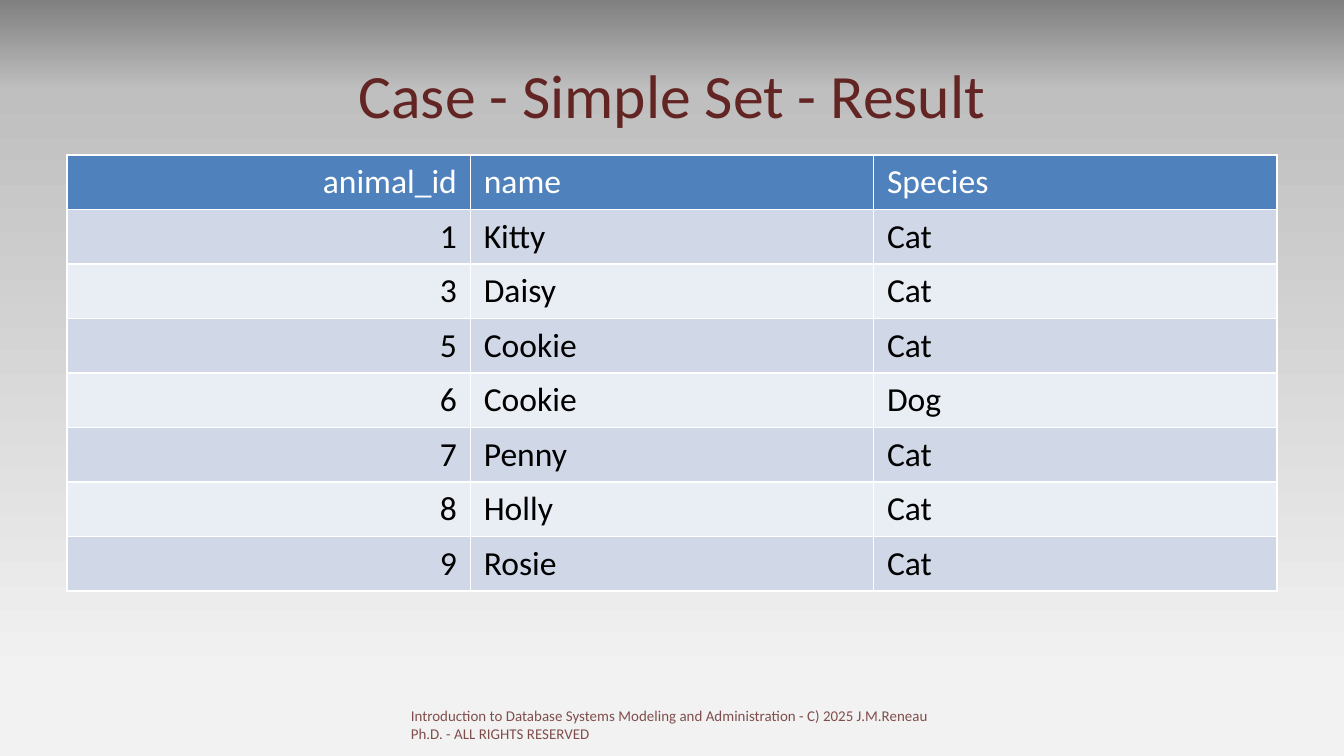
from copy import deepcopy

from lxml import etree
from pptx import Presentation
from pptx.dml.color import RGBColor
from pptx.enum.text import MSO_ANCHOR, PP_ALIGN
from pptx.oxml.ns import qn
from pptx.util import Pt

LEFT, CENTER, RIGHT = PP_ALIGN.LEFT, PP_ALIGN.CENTER, PP_ALIGN.RIGHT
TOP, MIDDLE = MSO_ANCHOR.TOP, MSO_ANCHOR.MIDDLE

COLORS = {
    "maroon": "632523",
    "header": "4F81BD",
    "band_dark": "D0D8E8",
    "band_light": "E9EDF4",
    "white": "FFFFFF",
    "black": "000000",
}
BACKGROUND = [(0, "808080"), (0.12, "BFBFBF"), (0.9, "F2F2F2")]
FONT = "Calibri"
ROW_HEIGHT = 29.2
COLUMN_WIDTH = 216

ROWS = [
    ("animal_id", "name", "Species"),
    ("1", "Kitty", "Cat"),
    ("3", "Daisy", "Cat"),
    ("5", "Cookie", "Cat"),
    ("6", "Cookie", "Dog"),
    ("7", "Penny", "Cat"),
    ("8", "Holly", "Cat"),
    ("9", "Rosie", "Cat"),
]
FOOTER = ("Introduction to Database Systems Modeling and Administration - "
          "C) 2025 J.M.Reneau Ph.D. - ALL RIGHTS RESERVED")


def rgb(name):
    return RGBColor.from_string(COLORS[name])


def set_background(slide):
    """Fill the slide with a gradient running from top to bottom."""
    fill = slide.background.fill
    fill.gradient()
    fill.gradient_angle = 270
    stops = slide.element.find(".//" + qn("a:gsLst"))
    stops.append(deepcopy(stops[-1]))
    for stop, (position, color) in zip(fill.gradient_stops, BACKGROUND):
        stop.position = position
        stop.color.rgb = RGBColor.from_string(color)


def write_text(tf, text, size, color, align=LEFT):
    p = tf.paragraphs[0]
    p.alignment = align
    r = p.add_run()
    r.text = text
    style = {"name": FONT, "size": Pt(size), "bold": False}
    for key, value in style.items():
        setattr(r.font, key, value)
    r.font.color.rgb = rgb(color)
    return r


def add_text(slide, box, text, size, align=LEFT, anchor=TOP):
    tf = slide.shapes.add_textbox(*map(Pt, box)).text_frame
    tf.word_wrap = True
    tf.vertical_anchor = anchor
    return write_text(tf, text, size, "maroon", align)


def set_opacity(r, percent):
    color = r.font.fill._xPr.find(".//" + qn("a:srgbClr"))
    etree.SubElement(color, qn("a:alpha"), val=str(percent * 1000))


def set_borders(cell, color, width):
    """Draw all four sides; border elements must precede the cell fill."""
    tc_pr = cell._tc.get_or_add_tcPr()
    for i, side in enumerate(("a:lnL", "a:lnR", "a:lnT", "a:lnB")):
        ln = etree.Element(qn(side), w=str(Pt(width)))
        fill = etree.SubElement(ln, qn("a:solidFill"))
        etree.SubElement(fill, qn("a:srgbClr"), val=COLORS[color])
        tc_pr.insert(i, ln)


def add_result_table(slide, left, top):
    n_rows, n_cols = len(ROWS), len(ROWS[0])
    size = (n_cols * COLUMN_WIDTH, n_rows * ROW_HEIGHT)
    table = slide.shapes.add_table(
        n_rows, n_cols, *map(Pt, (left, top, *size))).table
    for column in table.columns:
        column.width = Pt(COLUMN_WIDTH)
    for i, values in enumerate(ROWS):
        table.rows[i].height = Pt(ROW_HEIGHT)
        band = "header" if i == 0 else ("band_light", "band_dark")[i % 2]
        for j, value in enumerate(values):
            cell = table.cell(i, j)
            cell.fill.solid()
            cell.fill.fore_color.rgb = rgb(band)
            set_borders(cell, "white", 1)
            write_text(cell.text_frame, value, 18,
                       "white" if i == 0 else "black",
                       RIGHT if j == 0 else LEFT)


def main():
    prs = Presentation()
    prs.slide_width, prs.slide_height = Pt(720), Pt(405)
    slide = prs.slides.add_slide(prs.slide_layouts[6])
    set_background(slide)
    add_text(slide, (36, 16.5, 648, 67.5), "Case - Simple Set - Result", 33,
             CENTER, MIDDLE)
    add_result_table(slide, 36, 83)
    footer = add_text(slide, (213, 375, 292.5, 21.6), FOOTER, 8)
    set_opacity(footer, 80)
    prs.save("out.pptx")


if __name__ == "__main__":
    main()
